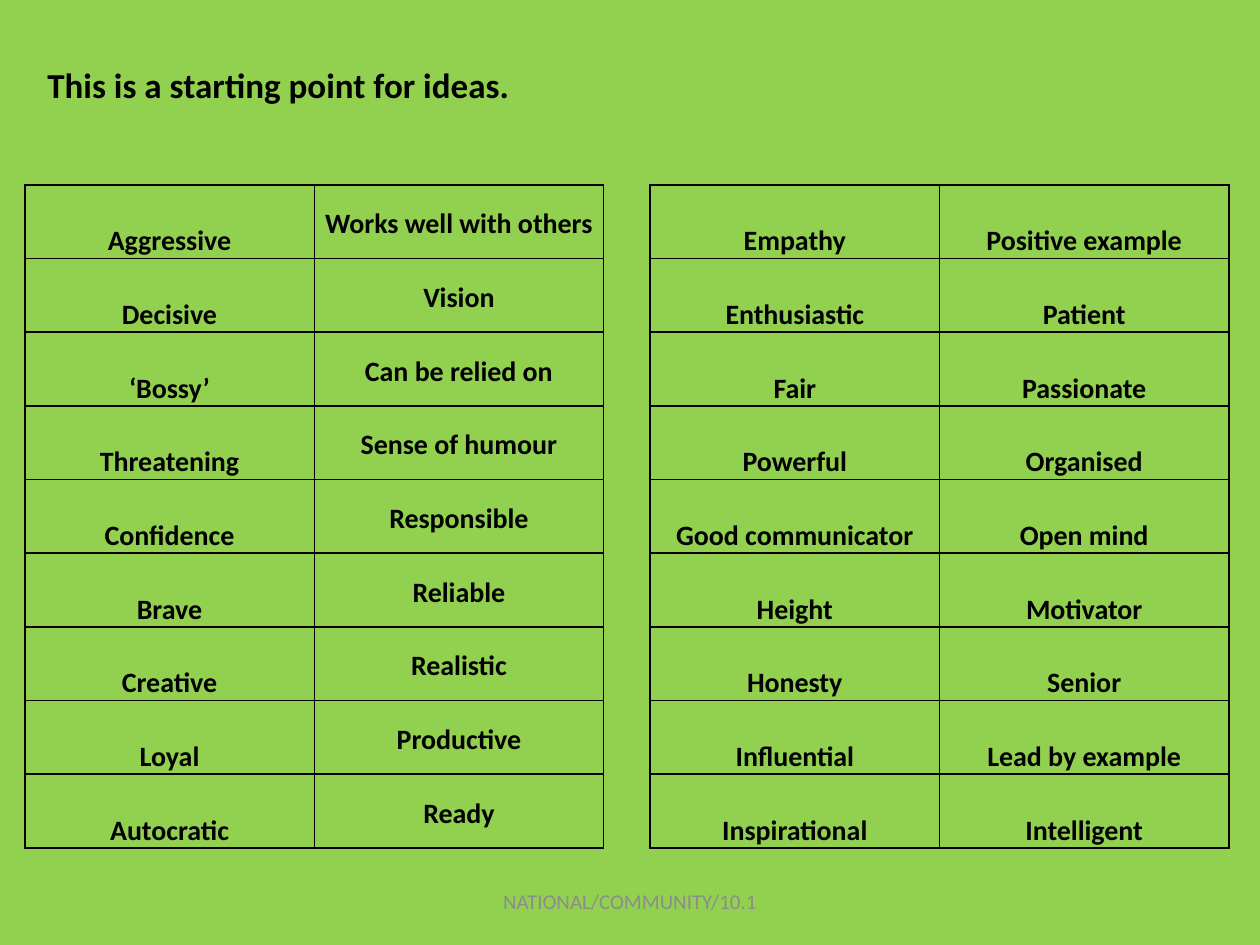
import pptx
import pptx.dml.color
import pptx.enum.text
import pptx.oxml
import pptx.oxml.ns
import pptx.util

Pt = pptx.util.Pt
ALIGN = pptx.enum.text.PP_ALIGN
ANCHOR = pptx.enum.text.MSO_ANCHOR

COLORS = {"background": "92D050", "text": "000000", "border": "000000", "footer": "8C8C8C"}

TABLE_TOP = 105.6
COLUMN_WIDTH = 165.4
ROW_HEIGHT = 42.12

LEFT_QUALITIES = [
    ("Aggressive", "Works well with others"),
    ("Decisive", "Vision"),
    ("‘Bossy’", "Can be relied on"),
    ("Threatening", "Sense of humour"),
    ("Confidence", "Responsible"),
    ("Brave", "Reliable"),
    ("Creative", "Realistic"),
    ("Loyal", "Productive"),
    ("Autocratic", "Ready"),
]
RIGHT_QUALITIES = [
    ("Empathy", "Positive example"),
    ("Enthusiastic", "Patient"),
    ("Fair", "Passionate"),
    ("Powerful", "Organised"),
    ("Good communicator", "Open mind"),
    ("Height", "Motivator"),
    ("Honesty", "Senior"),
    ("Influential", "Lead by example"),
    ("Inspirational", "Intelligent"),
]


class SlideBuilder:
    font_name = "Calibri"

    def __init__(self, slide):
        self.slide = slide

    def background(self, color):
        fill = self.slide.background.fill
        fill.solid()
        fill.fore_color.rgb = pptx.dml.color.RGBColor.from_string(COLORS[color])

    def style(self, paragraph, size, color="text", bold=True, align=ALIGN.LEFT):
        paragraph.alignment = align
        font = paragraph.font
        font.name = self.font_name
        font.size = Pt(size)
        font.bold = bold
        font.color.rgb = pptx.dml.color.RGBColor.from_string(COLORS[color])

    def text(self, text, left, top, width, height, size, **style):
        shape = self.slide.shapes.add_textbox(Pt(left), Pt(top), Pt(width), Pt(height))
        frame = shape.text_frame
        frame.word_wrap = True
        frame.vertical_anchor = ANCHOR.MIDDLE
        frame.text = text
        self.style(frame.paragraphs[0], size, **style)

    def borders(self, cell):
        properties = cell._tc.get_or_add_tcPr()
        for side in ("lnL", "lnR", "lnT", "lnB"):
            properties.append(pptx.oxml.parse_xml(
                f'<a:{side} {pptx.oxml.ns.nsdecls("a")} w="{Pt(1)}"><a:solidFill>'
                f'<a:srgbClr val="{COLORS["border"]}"/></a:solidFill></a:{side}>'))

    def table(self, rows, left, anchors):
        """Draw a grid of words; anchors gives the vertical anchor of each column."""
        shape = self.slide.shapes.add_table(
            len(rows), len(anchors), Pt(left), Pt(TABLE_TOP),
            Pt(COLUMN_WIDTH * len(anchors)), Pt(ROW_HEIGHT * len(rows)))
        table = shape.table
        table.first_row = table.horz_banding = False
        for column in table.columns:
            column.width = Pt(COLUMN_WIDTH)
        for row, words in zip(table.rows, rows):
            row.height = Pt(ROW_HEIGHT)
            for cell, word, anchor in zip(row.cells, words, anchors):
                cell.text = word
                cell.vertical_anchor = anchor
                cell.margin_left = cell.margin_right = Pt(3.6)
                cell.margin_top = cell.margin_bottom = 0
                self.borders(cell)
                cell.fill.background()
                paragraph = cell.text_frame.paragraphs[0]
                paragraph.line_spacing = 1.15
                self.style(paragraph, 16, align=ALIGN.CENTER)


def main():
    presentation = pptx.Presentation()
    presentation.slide_width = Pt(720)
    presentation.slide_height = Pt(540)
    builder = SlideBuilder(presentation.slides.add_slide(presentation.slide_layouts[6]))

    builder.background("background")
    builder.table(LEFT_QUALITIES, 14.2, (ANCHOR.BOTTOM, ANCHOR.MIDDLE))
    builder.table(RIGHT_QUALITIES, 371.5, (ANCHOR.BOTTOM, ANCHOR.BOTTOM))
    builder.text("This is a starting point for ideas.", 20, 32, 340, 32, 20)
    builder.text("NATIONAL/COMMUNITY/10.1", 246, 500.5, 228, 28.8, 12,
                 color="footer", bold=False, align=ALIGN.CENTER)
    presentation.save("out.pptx")


if __name__ == "__main__":
    main()
